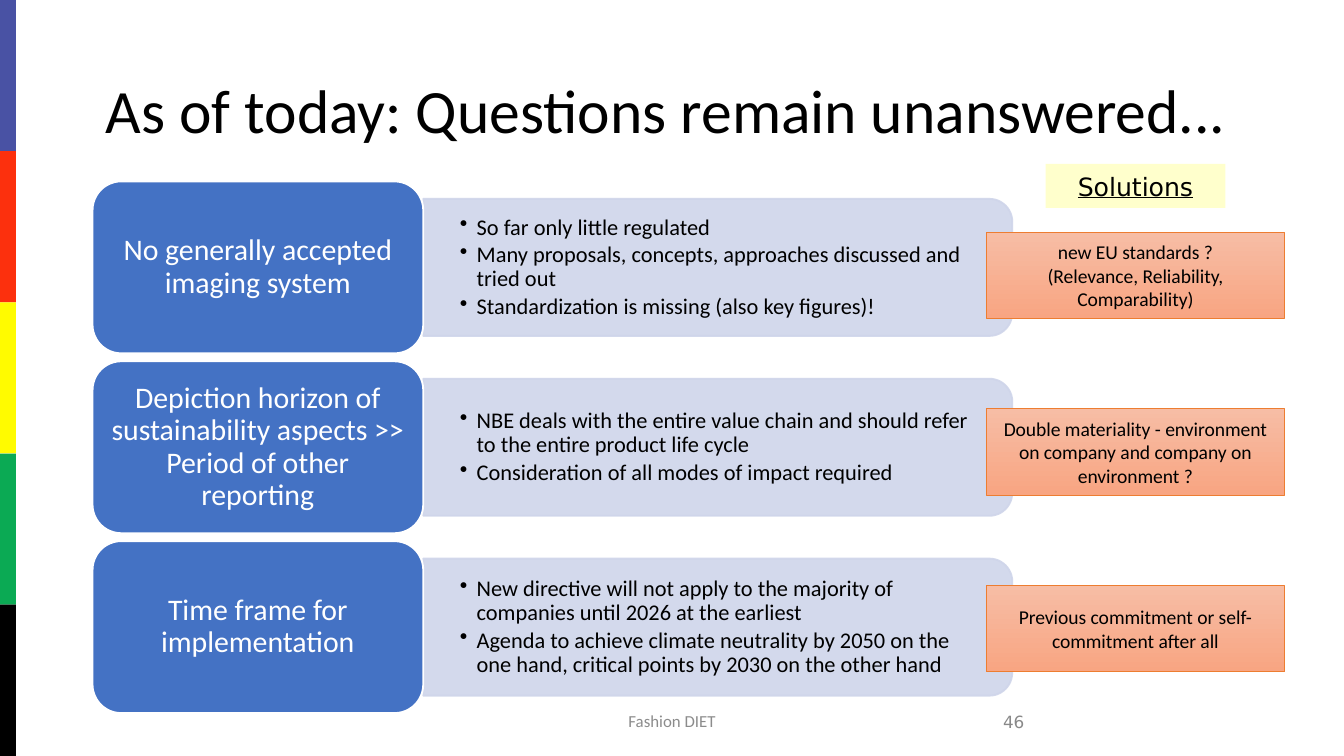
import pptx
import pptx.util
import pptx.dml.color
import pptx.enum.shapes
import pptx.enum.text
from lxml import etree

Cm, Pt = pptx.util.Cm, pptx.util.Pt
RGBColor = pptx.dml.color.RGBColor
Form = pptx.enum.shapes.MSO_SHAPE
Align = pptx.enum.text.PP_ALIGN
Anchor = pptx.enum.text.MSO_ANCHOR
qn = pptx.oxml.ns.qn

BLACK = RGBColor(0x00, 0x00, 0x00)
WHITE = RGBColor(0xFF, 0xFF, 0xFF)
BLUE = RGBColor(0x44, 0x72, 0xC4)
PALE = RGBColor(0xCF, 0xD5, 0xEA)
PEACH = RGBColor(0xF7, 0xBD, 0xA5)
CORAL = RGBColor(0xF8, 0xA5, 0x82)
ORANGE = RGBColor(0xED, 0x7D, 0x31)
CREAM = RGBColor(0xFF, 0xFF, 0xCC)
GREY = RGBColor(0x8C, 0x8C, 0x8C)
SILVER = RGBColor(0x89, 0x89, 0x89)
BANDS = [
    RGBColor(0x49, 0x52, 0xA4),
    RGBColor(0xFC, 0x30, 0x0D),
    RGBColor(0xFF, 0xFB, 0x00),
    RGBColor(0x0B, 0xAA, 0x54),
    BLACK,
]

TITLE = "As of today: Questions remain unanswered..."
ROWS = [
    {
        "label": "No generally accepted imaging system",
        "points": [
            "So far only little regulated",
            "Many proposals, concepts, approaches discussed and tried out",
            "Standardization is missing (also key figures)!",
        ],
        "answer": ["new EU standards ?", "(Relevance, Reliability, Comparability)"],
    },
    {
        "label": "Depiction horizon of sustainability aspects >> Period of other reporting",
        "points": [
            "NBE deals with the entire value chain and should refer to the entire product life cycle",
            "Consideration of all modes of impact required",
        ],
        "answer": ["Double materiality - environment on company and company on environment ?"],
    },
    {
        "label": "Time frame for implementation",
        "points": [
            "New directive will not apply to the majority of companies until 2026 at the earliest",
            "Agenda to achieve climate neutrality by 2050 on the one hand, critical points by 2030 on the other hand",
        ],
        "answer": ["Previous commitment or self-commitment after all"],
    },
]

WIDE, HIGH = 25.4, 14.29
LEFT, TOP, STEP = 1.75, 3.43, 3.4
LABEL_W, LABEL_H = 6.25, 3.25
PANEL_W, PANEL_H = 11.13, 2.59
NOTE_TOP, NOTE_STEP = 4.39, 3.34

deck = pptx.Presentation()
deck.slide_width, deck.slide_height = Cm(WIDE), Cm(HIGH)
slide = deck.slides.add_slide(deck.slide_layouts[6])


def add_form(kind, x, y, w, h, fill=None, line=None, width=1):
    form = slide.shapes.add_shape(kind, Cm(x), Cm(y), Cm(w), Cm(h))
    form.shadow.inherit = False
    if fill is not None:
        form.fill.solid()
        form.fill.fore_color.rgb = fill
    if line is None:
        form.line.fill.background()
    else:
        form.line.color.rgb = line
        form.line.width = Pt(width)
    return form


def add_box(x, y, w, h):
    return slide.shapes.add_textbox(Cm(x), Cm(y), Cm(w), Cm(h))


def write(shape, lines, size, color=BLACK, face="Calibri", align=Align.CENTER,
          pad=(0.25, 0.13), lead=1, bullet=False):
    frame = shape.text_frame
    frame.word_wrap = True
    frame.vertical_anchor = Anchor.MIDDLE
    frame.margin_left = frame.margin_right = Cm(pad[0])
    frame.margin_top = frame.margin_bottom = Cm(pad[1])
    frame.text = "\n".join(lines)
    for para in frame.paragraphs:
        para.alignment = align
        para.line_spacing = lead
        if bullet:
            para.space_after = Pt(1.8)
            props = para._p.get_or_add_pPr()
            props.set("marL", str(Cm(0.32)))
            props.set("indent", str(-Cm(0.32)))
            etree.SubElement(props, qn("a:buChar")).set("char", "•")
        para.font.name = face
        para.font.size = Pt(size)
        para.font.color.rgb = color


def add_panel(x, y):
    form = add_form(Form.ROUND_2_SAME_RECTANGLE, x + (PANEL_W - PANEL_H) / 2,
                    y - (PANEL_W - PANEL_H) / 2, PANEL_H, PANEL_W, PALE, PALE)
    form.rotation = 90
    for color in form._element.spPr.iter(qn("a:srgbClr")):
        etree.SubElement(color, qn("a:alpha")).set("val", "90000")


def add_note(y, lines):
    form = add_form(Form.RECTANGLE, 18.64, y, 5.64, 1.63, line=ORANGE, width=0.5)
    form.fill.gradient()
    form.fill.gradient_angle = 270
    for stop, color in zip(form.fill.gradient_stops, (PEACH, CORAL)):
        stop.color.rgb = color
    for stop, place in zip(form.fill.gradient_stops, (0, 1)):
        stop.position = place
    write(form, lines, 10.5, pad=(0.23, 0.23))


band = HIGH / len(BANDS)
for i, color in enumerate(BANDS):
    add_form(Form.RECTANGLE, 0, i * band, 0.3, band, color)

write(add_box(LEFT, 0.76, 21.9, 2.77), [TITLE], 33, align=Align.LEFT, lead=0.9)

for i, row in enumerate(ROWS):
    y = TOP + i * STEP
    x = LEFT + LABEL_W
    add_panel(x, y + (LABEL_H - PANEL_H) / 2)
    write(add_box(x, y + 0.46, 11, 2.33), row["points"], 12, align=Align.LEFT,
          pad=(0.69, 0.36), lead=0.9, bullet=True)
    label = add_form(Form.ROUNDED_RECTANGLE, LEFT, y, LABEL_W, LABEL_H, BLUE, WHITE)
    write(label, [row["label"]], 16, WHITE, pad=(0.18, 0.08), lead=0.9)

for i, row in enumerate(ROWS):
    add_note(NOTE_TOP + i * NOTE_STEP, row["answer"])

head = add_form(Form.RECTANGLE, 19.76, 3.1, 3.4, 0.83, CREAM)
write(head, ["Solutions"], 13.5, face="DejaVu Sans")
head.text_frame.paragraphs[0].font.underline = True

write(add_box(8.41, 13.24, 8.58, 0.76), ["Fashion DIET"], 9, GREY)
write(add_box(13.9, 13.26, 5.71, 0.76), ["46"], 9, SILVER, "DejaVu Sans", Align.RIGHT)

deck.save("out.pptx")
